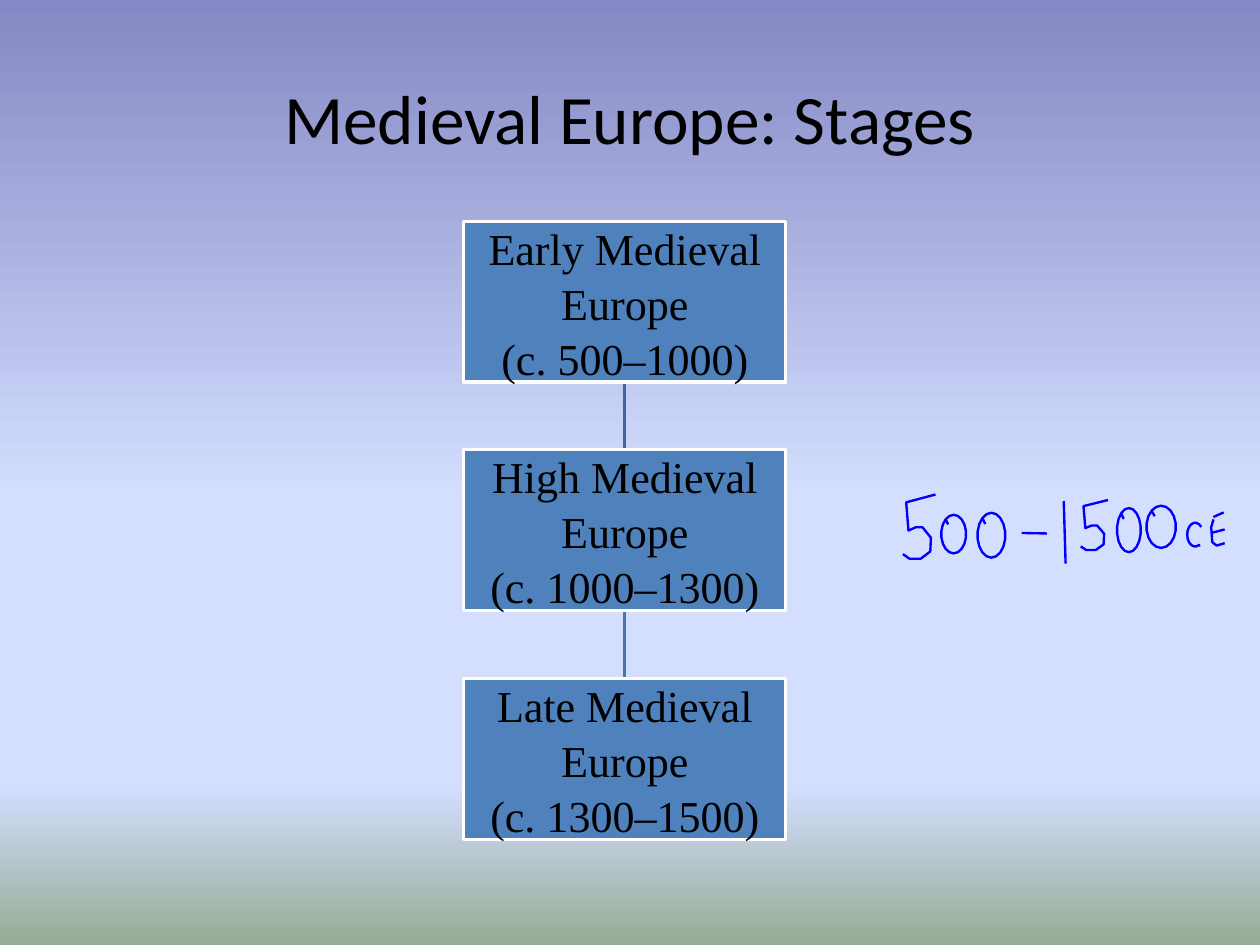
from copy import deepcopy
from math import cos, radians, sin

from lxml.etree import SubElement
from pptx import Presentation
from pptx.dml.color import RGBColor
from pptx.enum.shapes import MSO_CONNECTOR, MSO_SHAPE
from pptx.enum.text import MSO_ANCHOR, PP_ALIGN
from pptx.oxml.ns import qn
from pptx.util import Pt

COLORS = {"text": "000000", "box": "4F81BD", "edge": "FFFFFF", "ink": "0000FF",
          "link_top": "3F6797", "link_bottom": "4875AC",
          "sky": "8488C4", "haze": "D4DEFF", "grass": "96AB94"}
SKY_STOPS = [(0, "sky"), (53, "haze"), (83, "haze"), (100, "grass")]
STAGES = ["Early Medieval Europe\n(c. 500–1000)",
          "High Medieval Europe\n(c. 1000–1300)",
          "Late Medieval Europe\n(c. 1300–1500)"]
LINKS = ["link_top", "link_bottom"]
BOX_LEFT, BOX_TOP, BOX_W, BOX_H, BOX_STEP = 294.5, 140.4, 204.5, 102.2, 145.1


def arc(start, end):
    angles = [radians(a) for a in range(start, end + 1, 20)]
    return [(0.5 + 0.5 * cos(a), 0.5 - 0.5 * sin(a)) for a in angles]


GLYPHS = {
    "five": [(1, 0), (0.1, 0.12), (0.17, 0.55), (0.4, 0.5), (0.6, 0.5), (0.86, 0.66),
             (0.84, 0.87), (0.55, 0.98), (0.2, 0.98), (0, 0.91)],
    "zero": arc(130, 490) + [(0.28, 0.25)],
    "c": arc(40, 300) + [(0.75, 1)],
    "e": [(0.17, 0), (0, 0.3), (0.08, 0.87), (0.4, 1), (1, 0.91)],
    "rise": [(0, 1), (1, 0)],
    "fall": [(0, 0), (1, 1)],
}
INK = [("five", 573.3, 314, 20.7, 41.6), ("zero", 597.6, 326.9, 15.8, 24.5),
       ("zero", 620.6, 325.6, 17.7, 28.5), ("fall", 648.7, 338.4, 16, 0.3),
       ("fall", 675.4, 318.2, 1.2, 39.6), ("five", 686.2, 317.5, 17.3, 32.4),
       ("zero", 709.2, 322.6, 15.1, 28), ("zero", 727.9, 321.1, 18.7, 26.8),
       ("c", 753.8, 331.9, 10.1, 15.1), ("e", 769, 329.8, 8.6, 16.6),
       ("rise", 769, 336.2, 8.6, 2.2), ("rise", 770.4, 325.4, 6.5, 2.9)]


def rgb(name):
    return RGBColor.from_string(COLORS[name])


def put_text(tf, text, font="Calibri", size=44, color="text", spacing=None, inset=3.6):
    tf.word_wrap = True
    tf.vertical_anchor = MSO_ANCHOR.MIDDLE
    tf.margin_left = tf.margin_right = tf.margin_top = tf.margin_bottom = Pt(inset)
    p = tf.paragraphs[0]
    p.alignment = PP_ALIGN.CENTER
    p.line_spacing = spacing
    for i, line in enumerate(text.split("\n")):
        if i:
            p.add_line_break()
        r = p.add_run()
        r.text = line
        r.font.name = font
        r.font.size = Pt(size)
        r.font.color.rgb = rgb(color)


class Deck:
    def __init__(self, width, height):
        self.prs = Presentation()
        self.prs.slide_width, self.prs.slide_height = Pt(width), Pt(height)
        self.s = self.prs.slides.add_slide(self.prs.slide_layouts[5])

    def background(self, stops):
        fill = self.s.background.fill
        fill.gradient()
        fill.gradient_angle = 270
        gs_list = self.s._element.find(".//" + qn("a:gsLst"))
        for _ in stops[2:]:
            gs_list.append(deepcopy(gs_list[0]))
        for stop, (position, color) in zip(fill.gradient_stops, stops):
            stop.position = position / 100
            stop.color.rgb = rgb(color)

    def title(self, text, x, y, w, h):
        sp = self.s.shapes.title
        sp.left, sp.top, sp.width, sp.height = Pt(x), Pt(y), Pt(w), Pt(h)
        put_text(sp.text_frame, text)

    def outline(self, sp, color, width):
        sp.line.color.rgb = rgb(color)
        sp.line.width = Pt(width)

    def link(self, x, y1, y2, color):
        cxn = self.s.shapes.add_connector(MSO_CONNECTOR.STRAIGHT, Pt(x), Pt(y1), Pt(x), Pt(y2))
        self.outline(cxn, color, 2)
        SubElement(cxn._element.spPr, qn("a:effectLst"))

    def box(self, text, x, y, w, h):
        sp = self.s.shapes.add_shape(MSO_SHAPE.RECTANGLE, Pt(x), Pt(y), Pt(w), Pt(h))
        sp.shadow.inherit = False
        sp.fill.solid()
        sp.fill.fore_color.rgb = rgb("box")
        self.outline(sp, "edge", 2)
        put_text(sp.text_frame, text, font="Times New Roman", size=28, spacing=1.04, inset=1.4)

    def stroke(self, glyph, x, y, w, h):
        points = [(Pt(x + u * w), Pt(y + v * h)) for u, v in GLYPHS[glyph]]
        builder = self.s.shapes.build_freeform(*points[0])
        builder.add_line_segments(points[1:], close=False)
        sp = builder.convert_to_shape()
        sp.shadow.inherit = False
        sp.fill.background()
        self.outline(sp, "ink", 1.5)


def main():
    deck = Deck(800, 600)
    deck.background(SKY_STOPS)
    deck.title("Medieval Europe: Stages", 40, 24, 720, 100)
    for i, color in enumerate(LINKS):
        top = BOX_TOP + i * BOX_STEP
        deck.link(BOX_LEFT + BOX_W / 2, top + BOX_H, top + BOX_STEP, color)
    for i, stage in enumerate(STAGES):
        deck.box(stage, BOX_LEFT, BOX_TOP + i * BOX_STEP, BOX_W, BOX_H)
    for glyph, x, y, w, h in INK:
        deck.stroke(glyph, x, y, w, h)
    deck.prs.save("out.pptx")


if __name__ == "__main__":
    main()
